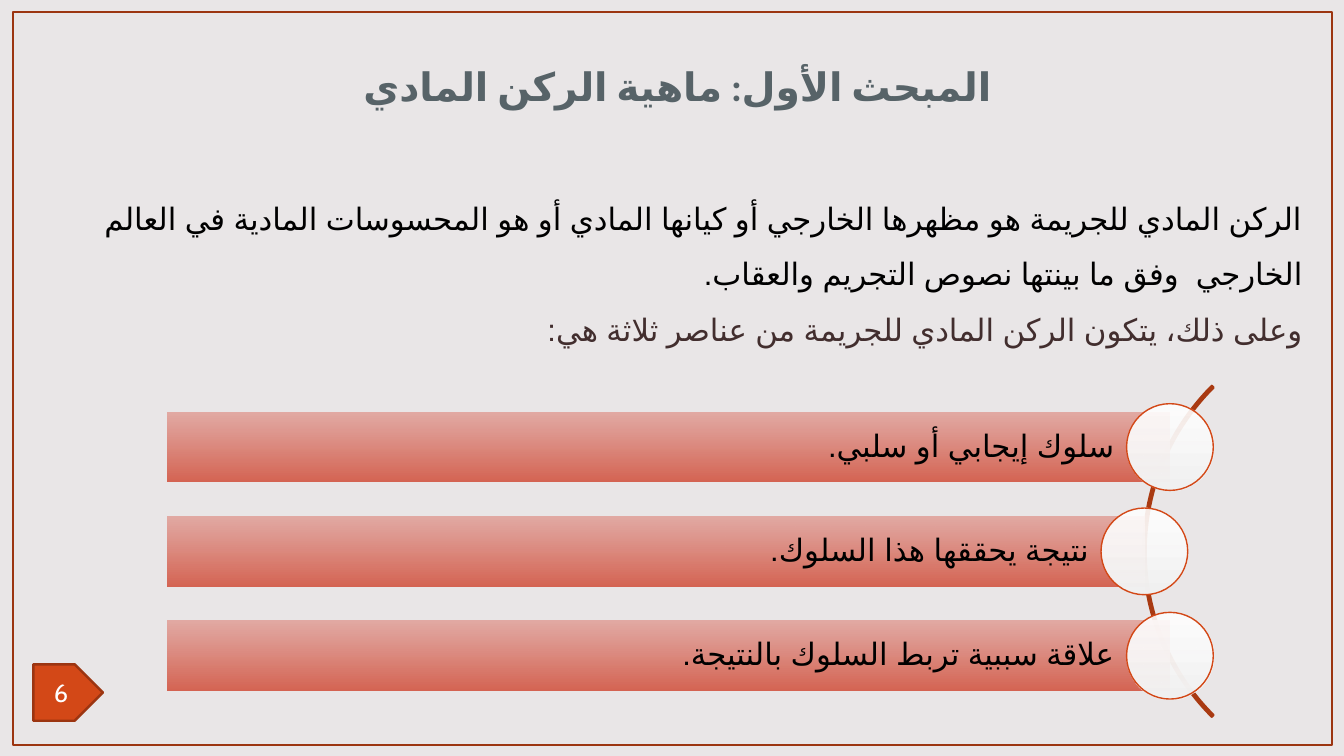
from dataclasses import dataclass
from typing import Any, Optional

import lxml.etree
import pptx
import pptx.dml.color
import pptx.enum.lang
import pptx.enum.shapes
import pptx.enum.text
import pptx.oxml.ns
import pptx.util

SHAPE = pptx.enum.shapes.MSO_SHAPE
ALIGN = pptx.enum.text.PP_ALIGN
ANCHOR = pptx.enum.text.MSO_ANCHOR
LANGUAGE = pptx.enum.lang.MSO_LANGUAGE_ID

WIDTH, HEIGHT = pptx.util.Inches(13.33), pptx.util.Inches(7.5)
COLUMN, ROW = WIDTH / 100, HEIGHT / 100

COLORS = {
    "paper": "E9E6E7", "frame": "9C3511", "tag": "D34817", "arc": "A93A12",
    "title": "576368", "definition": "000000", "lead": "422E2E",
    "white": "FFFFFF", "pearl": "F2F2F2", "rose": "E2A39C", "brick": "D56453",
}


@dataclass(frozen=True)
class Area:
    """Left, top, width and height in hundredths of the slide."""
    left: float
    top: float
    width: float
    height: float

    def lengths(self) -> tuple[int, ...]:
        return (round(self.left * COLUMN), round(self.top * ROW),
                round(self.width * COLUMN), round(self.height * ROW))


@dataclass(frozen=True)
class TextStyle:
    size: float
    font: str
    color: str
    align: Any
    bold: bool = False
    rtl: bool = True
    spacing: float = 1.0
    after: float = 0


@dataclass(frozen=True)
class Element:
    text: str
    right: float


TITLE = TextStyle(28, "Calibri", "title", ALIGN.CENTER, bold=True, spacing=1.1, after=6)
DEFINITION = TextStyle(22, "Arial", "definition", ALIGN.RIGHT, spacing=1.5)
LEAD = TextStyle(22, "Arial", "lead", ALIGN.RIGHT, spacing=1.5)
ELEMENT = TextStyle(22, "Arial", "definition", ALIGN.RIGHT, spacing=0.9)
NUMBER = TextStyle(18, "Cabin", "white", ALIGN.CENTER, rtl=False)

ELEMENTS = [
    Element("سلوك إيجابي أو سلبي.", 87.05),
    Element("نتيجة يحققها هذا السلوك.", 85.15),
    Element("علاقة سببية تربط السلوك بالنتيجة.", 87.05),
]
BAR_LEFT, BAR_HEIGHT = 12.45, 9.2
FIRST_CENTER, PITCH = 59.13, 13.8
CIRCLE_WIDTH, CIRCLE_HEIGHT = 6.45, 11.47


def rgb(name: str) -> pptx.dml.color.RGBColor:
    return pptx.dml.color.RGBColor.from_string(COLORS[name])


def apply(target: Any, values: dict[str, Any]) -> None:
    for name, value in values.items():
        setattr(target, name, value)


def draw_shape(page: Any, kind: Any, area: Area, fill: Optional[str] = None,
               line: Optional[str] = None, weight: float = 1.75) -> Any:
    shape = page.shapes.add_shape(kind, *area.lengths())
    shape.shadow.inherit = False
    if fill:
        shape.fill.solid()
        shape.fill.fore_color.rgb = rgb(fill)
    else:
        shape.fill.background()
    if line:
        shape.line.color.rgb = rgb(line)
        shape.line.width = pptx.util.Pt(weight)
    else:
        shape.line.fill.background()
    return shape


def shade(shape: Any, top: str, bottom: str) -> None:
    """Fill downwards from a 90 % opaque top colour to a solid bottom colour."""
    shape.fill.gradient()
    shape.fill.gradient_angle = 270
    for stop, name in zip(shape.fill.gradient_stops, (top, bottom)):
        stop.color.rgb = rgb(name)
    first = shape.fill._fill._gradFill.find(".//" + pptx.oxml.ns.qn("a:srgbClr"))
    lxml.etree.SubElement(first, pptx.oxml.ns.qn("a:alpha"), val="90000")


def write(box: Any, lines: list[tuple[str, TextStyle]], anchor: Any) -> None:
    frame = box.text_frame
    apply(frame, {"word_wrap": True, "vertical_anchor": anchor})
    for index, (text, style) in enumerate(lines):
        para = frame.add_paragraph() if index else frame.paragraphs[0]
        apply(para, {"alignment": style.align, "line_spacing": style.spacing,
                     "space_before": pptx.util.Pt(0),
                     "space_after": pptx.util.Pt(style.after)})
        para._p.get_or_add_pPr().set("rtl", str(int(style.rtl)))
        span = para.add_run()
        span.text = text
        language = LANGUAGE.ARABIC if style.rtl else LANGUAGE.ENGLISH_US
        apply(span.font, {"size": pptx.util.Pt(style.size), "bold": style.bold,
                          "name": style.font, "language_id": language})
        span.font.color.rgb = rgb(style.color)
        lxml.etree.SubElement(span._r.get_or_add_rPr(), pptx.oxml.ns.qn("a:cs"),
                              typeface=style.font)


def draw_text(page: Any, area: Area, lines: list[tuple[str, TextStyle]], anchor: Any) -> None:
    write(page.shapes.add_textbox(*area.lengths()), lines, anchor)


def draw_element(page: Any, element: Element, center: float) -> None:
    bar = draw_shape(page, SHAPE.RECTANGLE,
                     Area(BAR_LEFT, center - BAR_HEIGHT / 2,
                          element.right - BAR_LEFT, BAR_HEIGHT))
    shade(bar, "rose", "brick")
    narrow = round(0.45 * COLUMN)
    apply(bar.text_frame, {"margin_left": narrow, "margin_top": narrow,
                           "margin_bottom": narrow,
                           "margin_right": round(4.13 * COLUMN)})
    write(bar, [(element.text, ELEMENT)], ANCHOR.MIDDLE)
    circle = draw_shape(page, SHAPE.OVAL,
                        Area(element.right - CIRCLE_WIDTH / 2, center - CIRCLE_HEIGHT / 2,
                             CIRCLE_WIDTH, CIRCLE_HEIGHT), line="tag", weight=1)
    shade(circle, "white", "pearl")


def main() -> None:
    deck = pptx.Presentation()
    apply(deck, {"slide_width": WIDTH, "slide_height": HEIGHT})
    page = deck.slides.add_slide(deck.slide_layouts[6])

    draw_shape(page, SHAPE.RECTANGLE, Area(0, 0, 100, 100), fill="paper")
    draw_shape(page, SHAPE.RECTANGLE, Area(0.98, 1.6, 98.12, 96.93), line="frame")
    tag = draw_shape(page, SHAPE.PENTAGON, Area(2.48, 87.87, 5.18, 7.47),
                     fill="tag", line="frame")
    write(tag, [("6", NUMBER)], ANCHOR.MIDDLE)

    draw_text(page, Area(22.2, 4.13, 56.41, 13.73),
              [("المبحث الأول: ماهية الركن المادي", TITLE)], ANCHOR.MIDDLE)
    draw_text(page, Area(2.33, 23.33, 95.35, 73.73), [
        ("الركن المادي للجريمة هو مظهرها الخارجي أو كيانها المادي أو هو المحسوسات "
         "المادية في العالم الخارجي  وفق ما بينتها نصوص التجريم والعقاب.", DEFINITION),
        ("وعلى ذلك، يتكون الركن المادي للجريمة من عناصر ثلاثة هي:", LEAD),
    ], ANCHOR.TOP)

    arc = draw_shape(page, SHAPE.BLOCK_ARC, Area(85.07, 42, 34.81, 61.87), line="arc")
    for index, value in enumerate((81, 135, 0.005)):
        arc.adjustments[index] = value
    for index, element in enumerate(ELEMENTS):
        draw_element(page, element, FIRST_CENTER + index * PITCH)

    deck.save("out.pptx")


if __name__ == "__main__":
    main()
